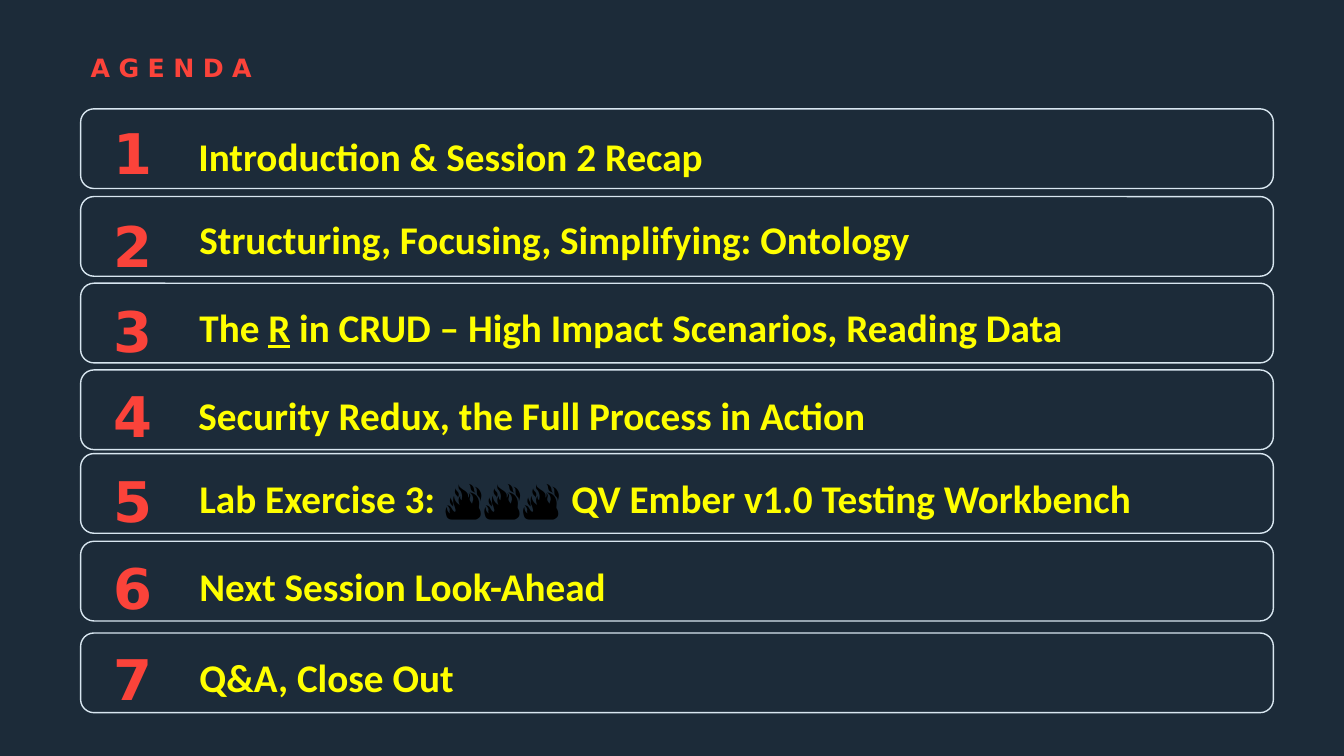
"""Build the agenda slide: seven outlined rows, each with a number and a topic."""
from dataclasses import dataclass

import pptx
import pptx.dml.color
import pptx.enum.shapes
import pptx.enum.text
import pptx.shapes.autoshape
import pptx.slide
import pptx.text.text
import pptx.util

Inches = pptx.util.Inches
Pt = pptx.util.Pt

NAVY, RED, YELLOW, PALE, BLACK = "1C2B39", "FB433A", "FFFF00", "D8E6F0", "000000"
HEADING = {"name": "DejaVu Sans", "size": Pt(18), "bold": True, "color": RED}
NUMBER = {**HEADING, "size": Pt(40)}
TOPIC = {"name": "Calibri", "size": Pt(28), "bold": True, "color": YELLOW}
UNDERLINED = {**TOPIC, "underline": True}
FLAMES = {**TOPIC, "name": "Arial", "color": BLACK}

Run = tuple[str, dict]


@dataclass
class AgendaRow:
    top: float
    number_top: float
    topic_left: float
    topic_top: float
    topic_width: float
    topic: list[Run]


ROWS = [
    AgendaRow(1.08, 1.13, 1.87, 1.26, 6.13, [("Introduction & Session 2 Recap", TOPIC)]),
    AgendaRow(1.95, 2.05, 1.88, 2.09, 8.29,
              [("Structuring, Focusing, Simplifying: Ontology", TOPIC)]),
    AgendaRow(2.81, 2.89, 1.88, 2.96, 10.04,
              [("The ", TOPIC), ("R", UNDERLINED),
               (" in CRUD – High Impact Scenarios, Reading Data", TOPIC)]),
    AgendaRow(3.67, 3.74, 1.87, 3.83, 8.73,
              [("Security Redux, the Full Process in Action", TOPIC)]),
    AgendaRow(4.5, 4.58, 1.88, 4.66, 10.24,
              [("Lab Exercise 3: ", TOPIC), ("🔥🔥🔥 ", FLAMES),
               ("QV Ember v1.0 Testing Workbench", TOPIC)]),
    AgendaRow(5.37, 5.44, 1.88, 5.53, 6.53, [("Next Session Look-Ahead", TOPIC)]),
    AgendaRow(6.28, 6.35, 1.88, 6.43, 6.53, [("Q&A, Close Out", TOPIC)]),
]


def rgb(value: str) -> pptx.dml.color.RGBColor:
    return pptx.dml.color.RGBColor.from_string(value)


def add_run(p: pptx.text.text._Paragraph, text: str, style: dict) -> pptx.text.text._Run:
    r = p.add_run()
    r.text = text
    for key, value in style.items():
        if key == "color":
            r.font.color.rgb = rgb(value)
        else:
            setattr(r.font, key, value)
    return r


def add_title(s: pptx.slide.Slide, text: str) -> None:
    sp = s.shapes.title
    sp.left, sp.top, sp.width, sp.height = map(Inches, (0.8, 0.46, 9.8, 0.46))
    tf = sp.text_frame
    tf.auto_size = pptx.enum.text.MSO_AUTO_SIZE.NONE
    tf.vertical_anchor = pptx.enum.text.MSO_ANCHOR.MIDDLE
    p = tf.paragraphs[0]
    p.alignment = pptx.enum.text.PP_ALIGN.LEFT
    p.line_spacing = 0.9
    r = add_run(p, text, HEADING)
    r._r.get_or_add_rPr().set("spc", "600")


def add_text(s: pptx.slide.Slide, left: float, top: float, width: float, height: float,
             runs: list[Run]) -> None:
    tf = s.shapes.add_textbox(*map(Inches, (left, top, width, height))).text_frame
    tf.word_wrap = True
    tf.auto_size = pptx.enum.text.MSO_AUTO_SIZE.SHAPE_TO_FIT_TEXT
    for text, style in runs:
        add_run(tf.paragraphs[0], text, style)


def add_frame(s: pptx.slide.Slide, top: float) -> None:
    sp = s.shapes.add_shape(pptx.enum.shapes.MSO_SHAPE.ROUNDED_RECTANGLE,
                            *map(Inches, (0.8, top, 11.83, 0.79)))
    sp.shadow.inherit = False
    sp.fill.background()
    sp.line.color.rgb = rgb(PALE)
    sp.line.width = Pt(1)


def add_row(s: pptx.slide.Slide, number: int, row: AgendaRow) -> None:
    add_frame(s, row.top)
    add_text(s, 1.03, row.number_top, 0.61, 0.77, [(str(number), NUMBER)])
    add_text(s, row.topic_left, row.topic_top, row.topic_width, 0.57, row.topic)


def main() -> None:
    prs = pptx.Presentation()
    prs.slide_width, prs.slide_height = Inches(13.33), Inches(7.5)
    s = prs.slides.add_slide(prs.slide_layouts[0])
    s.background.fill.solid()
    s.background.fill.fore_color.rgb = rgb(NAVY)
    subtitle = s.placeholders[1].element
    subtitle.getparent().remove(subtitle)
    add_title(s, "AGENDA")
    for number, row in enumerate(ROWS, 1):
        add_row(s, number, row)
    prs.save("out.pptx")


if __name__ == "__main__":
    main()
